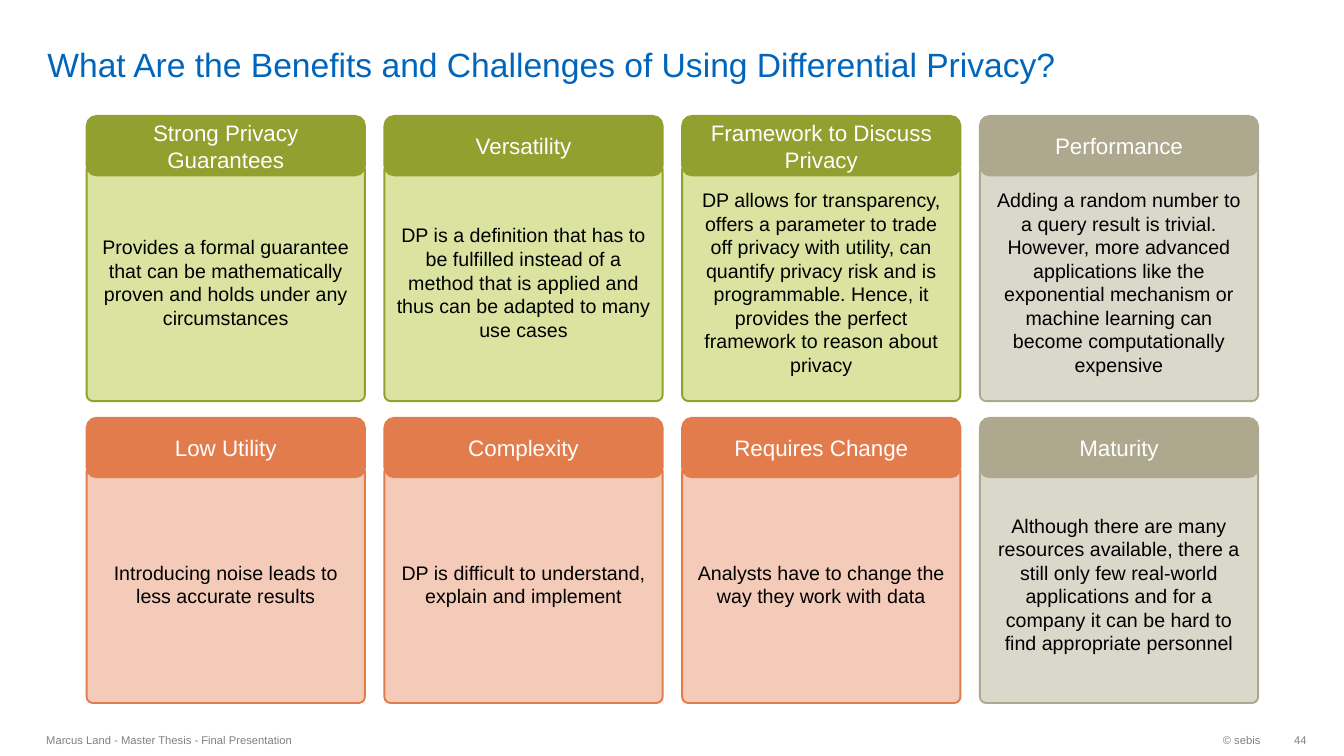
"""Builds the slide on the benefits and challenges of differential privacy."""
from pptx import Presentation
from pptx.dml.color import RGBColor
from pptx.enum.shapes import MSO_SHAPE
from pptx.enum.text import MSO_ANCHOR, PP_ALIGN
from pptx.util import Inches, Pt

ROUNDED = MSO_SHAPE.ROUNDED_RECTANGLE
MIDDLE, BOTTOM = MSO_ANCHOR.MIDDLE, MSO_ANCHOR.BOTTOM
LEFT, CENTER, RIGHT = PP_ALIGN.LEFT, PP_ALIGN.CENTER, PP_ALIGN.RIGHT

COLORS = {
    "title": "0065BD", "footer": "808080", "body": "000000", "heading": "FFFFFF",
    "benefit": "91A02F", "benefit_tint": "DBE3A1",
    "challenge": "E37C4D", "challenge_tint": "F4CBB8",
    "neutral": "AEA88E", "neutral_tint": "DAD7CB",
}
TITLE = "What Are the Benefits and Challenges of Using Differential Privacy?"
CARD_ROWS = [
    [
        ("benefit", "Strong Privacy Guarantees",
         "Provides a formal guarantee that can be mathematically proven and holds "
         "under any circumstances"),
        ("benefit", "Versatility",
         "DP is a definition that has to be fulfilled instead of a method that is "
         "applied and thus can be adapted to many use cases"),
        ("benefit", "Framework to Discuss Privacy",
         "DP allows for transparency, offers a parameter to trade off privacy with "
         "utility, can quantify privacy risk and is programmable. Hence, it provides "
         "the perfect framework to reason about privacy"),
        ("neutral", "Performance",
         "Adding a random number to a query result is trivial. However, more advanced "
         "applications like the exponential mechanism or machine learning can become "
         "computationally expensive"),
    ],
    [
        ("challenge", "Low Utility", "Introducing noise leads to less accurate results"),
        ("challenge", "Complexity", "DP is difficult to understand, explain and implement"),
        ("challenge", "Requires Change",
         "Analysts have to change the way they work with data"),
        ("neutral", "Maturity",
         "Although there are many resources available, there a\n"
         "still only few real-world applications and for a company it can be hard to "
         "find appropriate personnel"),
    ],
]
FOOTERS = [
    ("Marcus Land - Master Thesis - Final Presentation", 0.36, 6.3, LEFT, 0.1),
    ("© sebis", 10.26, 2.34, RIGHT, 0.1),
    ("44", 12.6, 0.36, RIGHT, 0),
]
FOOTER_TOP, FOOTER_HEIGHT = 7.18, 0.32
GRID_LEFT, GRID_TOP = 0.86, 1.15
COLUMN_STEP, ROW_STEP = 2.953, 2.995
CARD_WIDTH, HEADING_HEIGHT = 2.76, 0.59
BODY_OFFSET, BODY_HEIGHT = 0.47, 2.36
BODY_ROUNDING, HEADING_ROUNDING = 0.026, 0.1667


def rgb(name):
    return RGBColor.from_string(COLORS[name])


def write(shape, text, size, color, align, anchor=MIDDLE):
    frame = shape.text_frame
    frame.word_wrap = True
    frame.vertical_anchor = anchor
    frame.text = text
    for para in frame.paragraphs:
        para.alignment = align
        para.font.name = "Arial"
        para.font.size = Pt(size)
        para.font.color.rgb = rgb(color)


def add_panel(card, left, top, height, rounding, fill, line):
    panel = card.shapes.add_shape(
        ROUNDED, Inches(left), Inches(top), Inches(CARD_WIDTH), Inches(height))
    panel.adjustments[0] = rounding
    panel.shadow.inherit = False
    panel.fill.solid()
    panel.fill.fore_color.rgb = rgb(fill)
    panel.line.color.rgb = rgb(line)
    panel.line.width = Pt(1.35)
    return panel


def add_card(page, left, top, kind, heading, body):
    card = page.shapes.add_group_shape()
    body_panel = add_panel(card, left, top + BODY_OFFSET, BODY_HEIGHT,
                           BODY_ROUNDING, f"{kind}_tint", kind)
    write(body_panel, body, 14, "body", CENTER)
    heading_panel = add_panel(card, left, top, HEADING_HEIGHT,
                              HEADING_ROUNDING, kind, kind)
    write(heading_panel, heading, 16, "heading", CENTER)


def add_title(page):
    title = page.shapes.title
    title.left, title.top = Inches(0.37), Inches(0.05)
    title.width, title.height = Inches(11.58), Inches(0.79)
    write(title, TITLE, 24, "title", LEFT, BOTTOM)
    title.text_frame.margin_top = title.text_frame.margin_bottom = 0


def add_footer(page, text, left, width, align, right_margin):
    box = page.shapes.add_textbox(
        Inches(left), Inches(FOOTER_TOP), Inches(width), Inches(FOOTER_HEIGHT))
    write(box, text, 8, "footer", align)
    box.text_frame.margin_right = Inches(right_margin)


def main():
    deck = Presentation()
    deck.slide_width, deck.slide_height = Inches(13.33), Inches(7.5)
    page = deck.slides.add_slide(deck.slide_layouts[5])
    add_title(page)
    for footer in FOOTERS:
        add_footer(page, *footer)
    for row, cards in enumerate(CARD_ROWS):
        for column, card in enumerate(cards):
            add_card(page, GRID_LEFT + column * COLUMN_STEP,
                     GRID_TOP + row * ROW_STEP, *card)
    deck.save("out.pptx")


if __name__ == "__main__":
    main()
